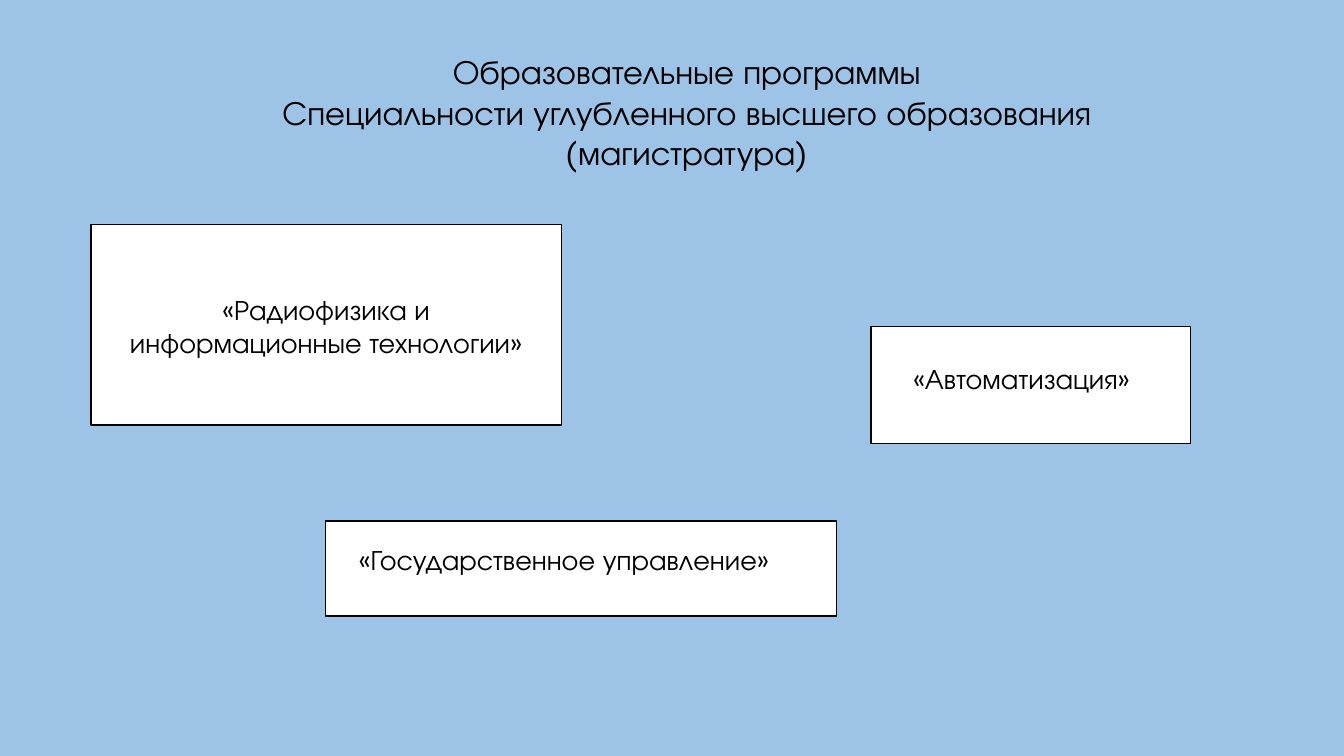
from dataclasses import dataclass

from pptx import Presentation
from pptx.dml.color import RGBColor
from pptx.enum.shapes import MSO_SHAPE
from pptx.enum.text import PP_ALIGN
from pptx.slide import Slide
from pptx.util import Cm, Pt

FONT = "TeX Gyre Adventor"
COLORS = {"sky": "9DC3E6", "card": "FFFFFF", "ink": "000000"}


@dataclass
class Area:
    left: float
    top: float
    width: float
    height: float

    def place(self) -> tuple[Cm, Cm, Cm, Cm]:
        return Cm(self.left), Cm(self.top), Cm(self.width), Cm(self.height)


@dataclass
class Label:
    area: Area
    lines: list[str]
    size: int = 20
    align: PP_ALIGN = PP_ALIGN.LEFT


CARDS = [
    Area(21.95, 8.23, 8.05, 2.95),
    Area(8.2, 13.13, 12.88, 2.39),
    Area(2.29, 5.66, 11.86, 5.05),
]

LABELS = [
    Label(
        Area(5.74, 1.17, 23.14, 3.33),
        [
            "Образовательные программы",
            "Специальности углубленного высшего образования",
            "(магистратура)",
        ],
        24,
        PP_ALIGN.CENTER,
    ),
    Label(
        Area(2.29, 7.24, 11.86, 1.96),
        ["«Радиофизика и", "информационные технологии»"],
        align=PP_ALIGN.CENTER,
    ),
    Label(Area(22.76, 8.99, 6.55, 1.12), ["«Автоматизация»"]),
    Label(Area(8.79, 13.54, 11.99, 1.12), ["«Государственное управление»"]),
]


def color(name: str) -> RGBColor:
    return RGBColor.from_string(COLORS[name])


def draw_card(slide: Slide, area: Area) -> None:
    card = slide.shapes.add_shape(MSO_SHAPE.RECTANGLE, *area.place())
    card.shadow.inherit = False
    card.fill.solid()
    card.fill.fore_color.rgb = color("card")
    card.line.color.rgb = color("ink")
    card.line.width = Pt(1)


def draw_label(slide: Slide, label: Label) -> None:
    frame = slide.shapes.add_textbox(*label.area.place()).text_frame
    frame.word_wrap = True
    para = frame.paragraphs[0]
    para.alignment = label.align
    for index, line in enumerate(label.lines):
        if index:
            para.add_line_break()
        run = para.add_run()
        run.text = line
        run.font.name = FONT
        run.font.size = Pt(label.size)
        run.font.color.rgb = color("ink")


def main() -> None:
    deck = Presentation()
    deck.slide_width, deck.slide_height = Cm(33.87), Cm(19.05)
    slide = deck.slides.add_slide(deck.slide_layouts[6])

    # Background
    slide.background.fill.solid()
    slide.background.fill.fore_color.rgb = color("sky")

    # White cards
    for area in CARDS:
        draw_card(slide, area)

    # Title and program names
    for label in LABELS:
        draw_label(slide, label)

    deck.save("out.pptx")


if __name__ == "__main__":
    main()
